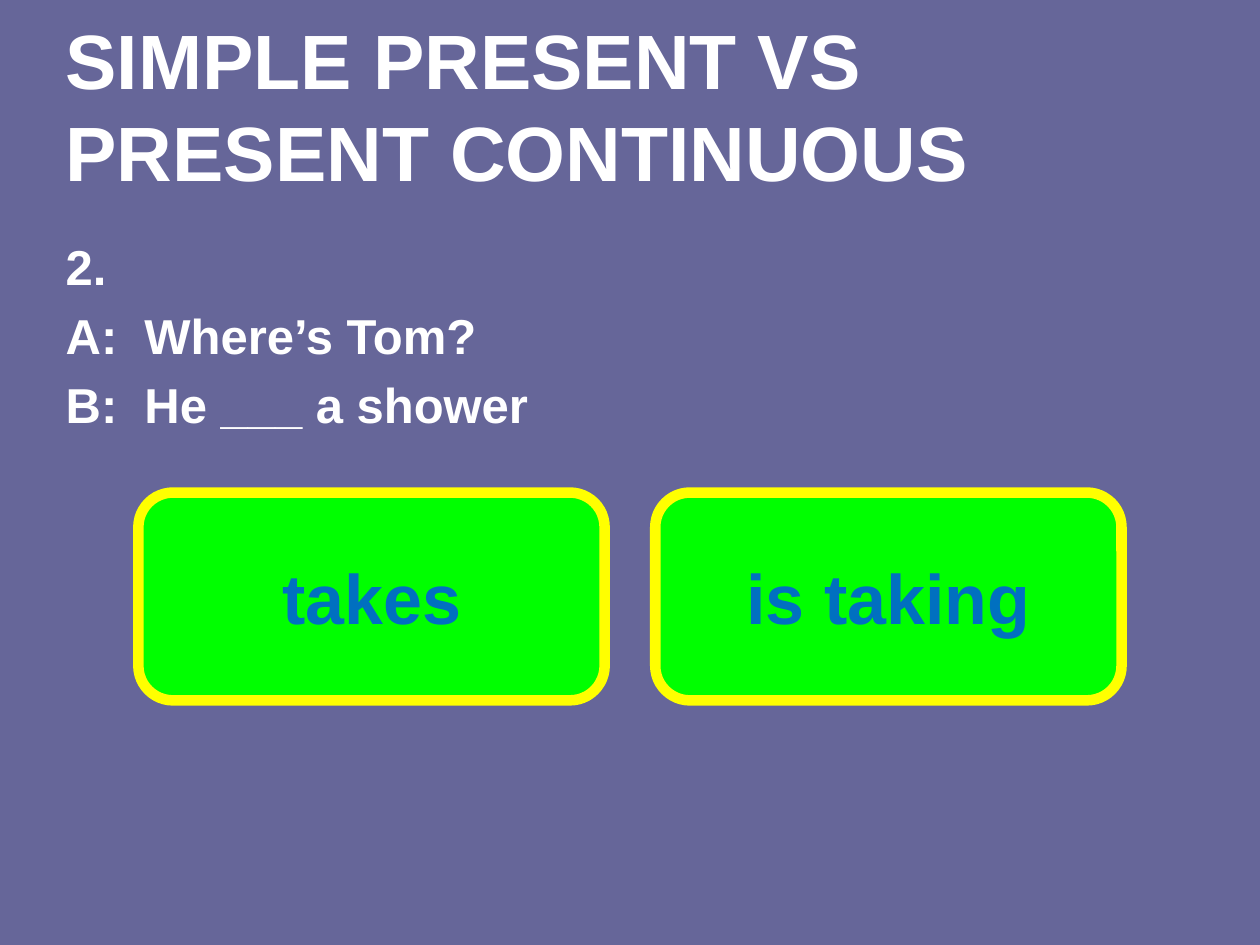
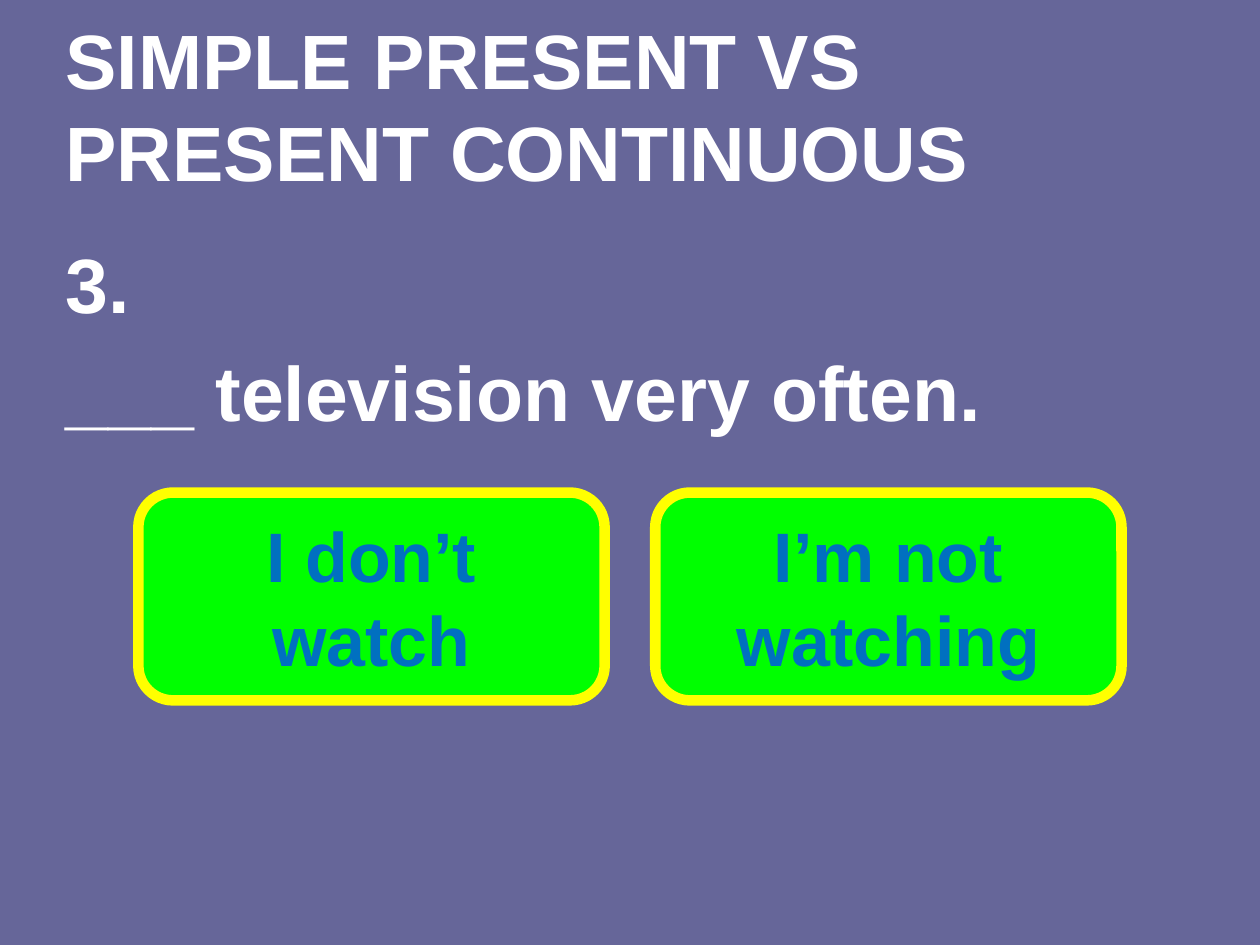
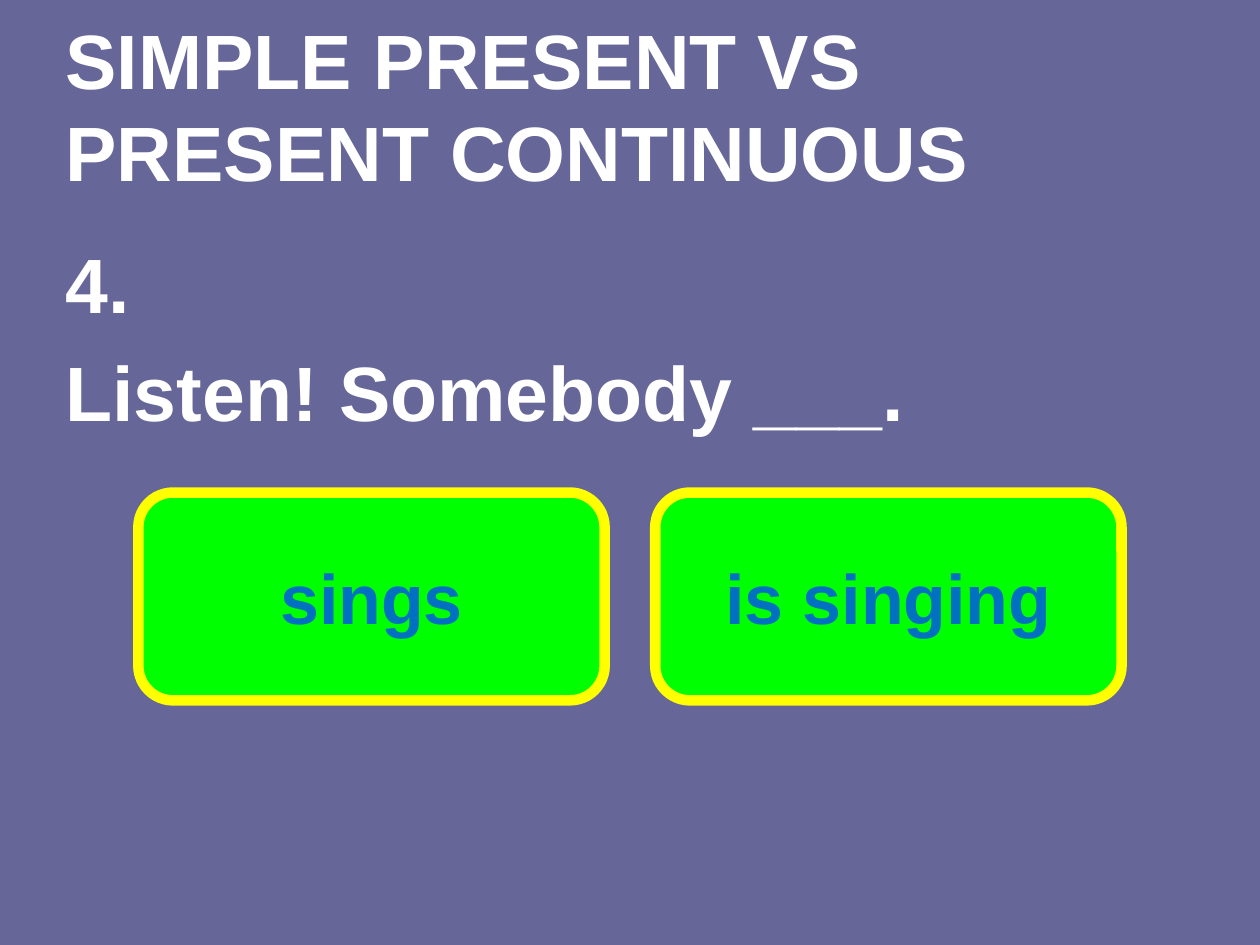
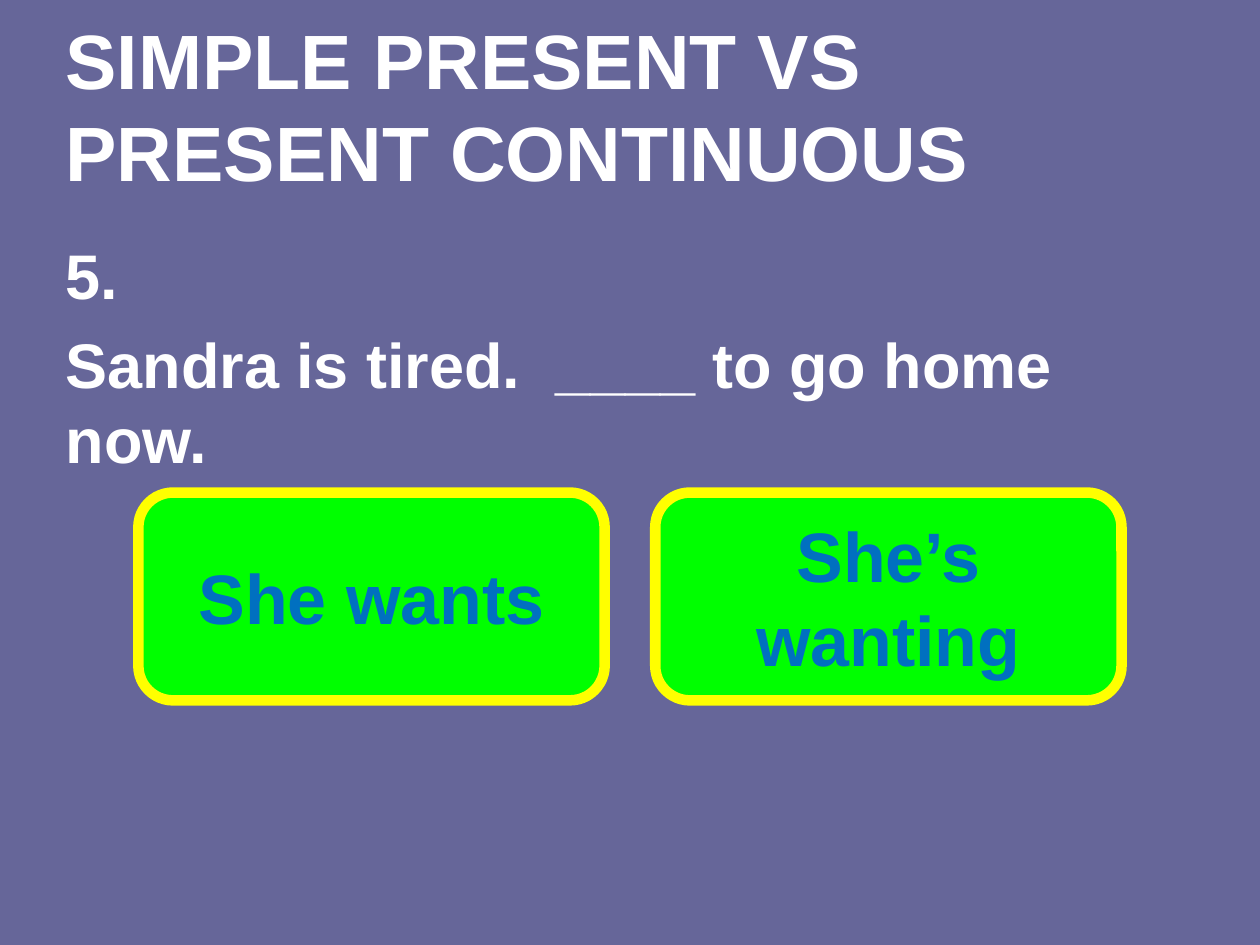
from dataclasses import dataclass

from lxml import etree
from pptx import Presentation
from pptx.dml.color import RGBColor
from pptx.enum.shapes import MSO_SHAPE
from pptx.enum.text import MSO_ANCHOR, MSO_AUTO_SIZE, PP_ALIGN
from pptx.oxml.ns import qn
from pptx.util import Cm, Pt

ROUNDED = MSO_SHAPE.ROUNDED_RECTANGLE
MIDDLE, TOP = MSO_ANCHOR.MIDDLE, MSO_ANCHOR.TOP
LEFT, CENTER = PP_ALIGN.LEFT, PP_ALIGN.CENTER
NO_AUTOFIT = MSO_AUTO_SIZE.NONE
TITLE_AND_CONTENT = 1


@dataclass(frozen=True)
class Theme:
    font: str = "Arial"
    background: RGBColor = RGBColor(0x66, 0x66, 0x99)
    text: RGBColor = RGBColor(0xFF, 0xFF, 0xFF)
    button_fill: RGBColor = RGBColor(0x00, 0xFF, 0x00)
    button_line: RGBColor = RGBColor(0xFF, 0xFF, 0x00)
    button_text: RGBColor = RGBColor(0x00, 0x70, 0xC0)
    title_size: int = 44
    button_size: int = 40
    button_line_width: int = 6
    paragraph_gap: float = 0.2


THEME = Theme()
SLIDE_WIDTH, SLIDE_HEIGHT = Cm(25.4), Cm(19.05)
BUTTON_WIDTH, BUTTON_HEIGHT, BUTTON_GAP = Cm(9.4), Cm(4.19), Cm(1.02)

# Boxes are left, top, width, height
TITLE_BOX = Cm(1.07), Cm(0.2), Cm(23.29), Cm(3.81)
QUESTION_BOX = Cm(1.07), Cm(4.65), Cm(23.29), Cm(4.88)
ANSWER_BOX = 0, Cm(9.93), SLIDE_WIDTH, BUTTON_HEIGHT

TITLE = "SIMPLE PRESENT VS PRESENT CONTINUOUS"
# Question lines, question type size, answers
QUIZ = [
    (["2.", "A:  Where’s Tom?", "B:  He ___ a shower"], 28, ["takes", "is taking"]),
    (["3.", "___ television very often."], 44, ["I don’t watch", "I’m not watching"]),
    (["4.", "Listen! Somebody ___."], 44, ["sings", "is singing"]),
    (["5.", "Sandra is tired.  ____ to go home now."], 36, ["She wants", "She’s wanting"]),
]


def set_attributes(target, values):
    for name, value in values.items():
        setattr(target, name, value)


def place(shape, box):
    set_attributes(shape, dict(zip(("left", "top", "width", "height"), box)))


def write_lines(shape, lines, size, color, alignment, anchor):
    """Fill a shape with one bold paragraph per line."""
    frame = shape.text_frame
    frame.text = "\n".join(lines)
    set_attributes(frame, {"word_wrap": True, "auto_size": NO_AUTOFIT, "vertical_anchor": anchor})
    for index, paragraph in enumerate(frame.paragraphs):
        gap = size * THEME.paragraph_gap if index else 0
        set_attributes(paragraph, {"alignment": alignment, "space_before": Pt(gap)})
        for run in paragraph.runs:
            set_attributes(run.font, {"name": THEME.font, "size": Pt(size), "bold": True})
            run.font.color.rgb = color


def remove_bullets(shape):
    for paragraph in shape.text_frame.paragraphs:
        properties = paragraph._p.get_or_add_pPr()
        properties.set("marL", "0")
        properties.set("indent", "0")
        etree.SubElement(properties, qn("a:buNone"))


def add_title(slide, box):
    title = slide.shapes.title
    place(title, box)
    write_lines(title, [TITLE], THEME.title_size, THEME.text, LEFT, MIDDLE)


def add_question(slide, box, lines, size):
    question = slide.placeholders[1]
    place(question, box)
    write_lines(question, lines, size, THEME.text, LEFT, TOP)
    remove_bullets(question)


def add_answers(slide, box, answers):
    """Centre a row of equal answer buttons in the box."""
    left, top, width, height = box
    step = BUTTON_WIDTH + BUTTON_GAP
    first_left = left + (width - len(answers) * step + BUTTON_GAP) // 2
    for index, answer in enumerate(answers):
        button = slide.shapes.add_shape(
            ROUNDED, first_left + index * step, top, BUTTON_WIDTH, height)
        button.shadow.inherit = False
        button.fill.solid()
        button.fill.fore_color.rgb = THEME.button_fill
        button.line.color.rgb = THEME.button_line
        button.line.width = Pt(THEME.button_line_width)
        write_lines(button, [answer], THEME.button_size, THEME.button_text, CENTER, MIDDLE)


def add_quiz_slide(presentation, lines, size, answers):
    slide = presentation.slides.add_slide(presentation.slide_layouts[TITLE_AND_CONTENT])
    add_title(slide, TITLE_BOX)
    add_question(slide, QUESTION_BOX, lines, size)
    add_answers(slide, ANSWER_BOX, answers)


def main():
    presentation = Presentation()
    set_attributes(presentation, {"slide_width": SLIDE_WIDTH, "slide_height": SLIDE_HEIGHT})
    background = presentation.slide_master.background.fill
    background.solid()
    background.fore_color.rgb = THEME.background
    for lines, size, answers in QUIZ:
        add_quiz_slide(presentation, lines, size, answers)
    presentation.save("out.pptx")


if __name__ == "__main__":
    main()
